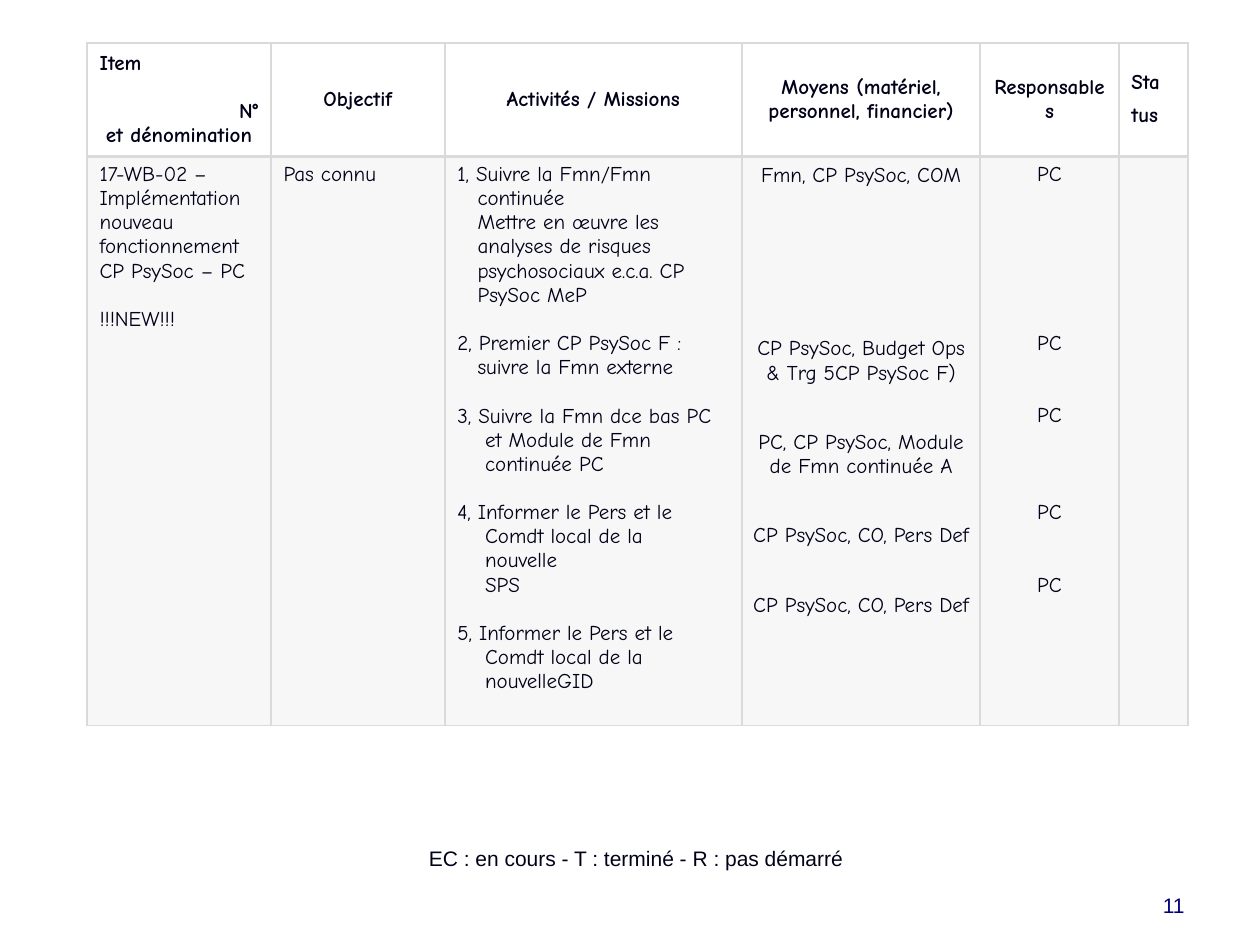
from dataclasses import dataclass

from lxml import etree
from pptx import Presentation
from pptx.dml.color import RGBColor
from pptx.enum.text import MSO_ANCHOR, PP_ALIGN
from pptx.oxml.ns import qn
from pptx.util import Inches, Pt

LEFT, MID, RIGHT = PP_ALIGN.LEFT, PP_ALIGN.CENTER, PP_ALIGN.RIGHT
TOP, CENTER, BOTTOM = MSO_ANCHOR.TOP, MSO_ANCHOR.MIDDLE, MSO_ANCHOR.BOTTOM


@dataclass(frozen=True)
class Theme:
    ink: str = "000018"
    navy: str = "000080"
    grey: str = "DADADA"
    tint: int = 20
    size: float = 12
    line: float = 13.8
    sans: str = "Arial"
    comic: str = "Comic Neue"


THEME = Theme()
COLS = (1.46, 1.38, 2.36, 1.89, 1.1, 0.55)
ROWS = (0.9, 4.52)

HEADS = (
    [("Item", {"align": LEFT}),
     ("N°", {"align": RIGHT, "before": THEME.line}),
     ("et dénomination", {})],
    [("Objectif", {})],
    [("Activités / Missions", {})],
    [("Moyens (matériel, personnel, financier)", {})],
    [("Responsables", {})],
    [("Sta", {"align": LEFT}), ("tus", {"align": LEFT, "before": 5})],
)

TASKS = (
    (0.16, ("1, Suivre la Fmn/Fmn", "continuée", "Mettre en œuvre les",
            "analyses de risques", "psychosociaux e.c.a. CP", "PsySoc MeP")),
    (0.16, ("2, Premier CP PsySoc F :", "suivre la Fmn externe")),
    (0.22, ("3, Suivre la Fmn dce bas PC", "et Module de Fmn",
            "continuée PC")),
    (0.22, ("4, Informer le Pers et le", "Comdt local de la", "nouvelle",
            "SPS")),
    (0.22, ("5, Informer le Pers et le", "Comdt local de la",
            "nouvelleGID")),
)

MEANS = (
    ("Fmn, CP PsySoc, COM", 0),
    ("CP PsySoc, Budget Ops & Trg 5CP PsySoc F)", 4),
    ("PC, CP PsySoc, Module de Fmn continuée A", 1),
    ("CP PsySoc, CO, Pers Def", 1),
    ("CP PsySoc, CO, Pers Def", 1),
)

OWNERS = (("PC", 0), ("PC", 6), ("PC", 2), ("PC", 3), ("PC", 2))


def spread(items, pad=0):
    return [(text, {"before": (skip + 1) * pad + skip * THEME.line if i else 0})
            for i, (text, skip) in enumerate(items)]


def list_tasks():
    lines = []
    for n, (shift, texts) in enumerate(TASKS):
        for i, text in enumerate(texts):
            gap = THEME.line if n and not i else 0
            lines.append((text, {"before": gap, "indent": shift if i else 0}))
    return lines


def write(frame, lines, align=LEFT, bold=False, face=THEME.comic,
          color=THEME.ink):
    for i, (text, form) in enumerate(lines):
        para = frame.add_paragraph() if i else frame.paragraphs[0]
        look = {"alignment": form.get("align", align),
                "space_before": Pt(form.get("before", 0))}
        for name, value in look.items():
            setattr(para, name, value)
        if form.get("indent"):
            para._p.get_or_add_pPr().set("marL", str(Inches(form["indent"])))
        run = para.add_run()
        run.text = text
        font = {"name": face, "size": Pt(THEME.size), "bold": bold}
        for name, value in font.items():
            setattr(run.font, name, value)
        run.font.color.rgb = RGBColor.from_string(color)


def add_text(slide, box, text, align, anchor, color):
    shape = slide.shapes.add_textbox(*map(Inches, box))
    frame = shape.text_frame
    frame.word_wrap = True
    frame.vertical_anchor = anchor
    write(frame, [(text, {})], align, face=THEME.sans, color=color)


def add_edges(cell, base):
    props = cell._tc.get_or_add_tcPr()
    for i, (side, wide) in enumerate(zip("LRTB", (1, 1, 1, base))):
        edge = etree.Element(qn(f"a:ln{side}"), w=str(Pt(wide)))
        fill = etree.SubElement(edge, qn("a:solidFill"))
        etree.SubElement(fill, qn("a:srgbClr"), val=THEME.grey)
        props.insert(i, edge)


def tint(cell):
    cell.fill.solid()
    cell.fill.fore_color.rgb = RGBColor.from_string(THEME.grey)
    color = cell._tc.tcPr.find(f".//{qn('a:srgbClr')}")
    etree.SubElement(color, qn("a:alpha"), val=str(THEME.tint * 1000))


def fill_head(table):
    for col, lines in enumerate(HEADS):
        cell = table.cell(0, col)
        cell.vertical_anchor = CENTER
        cell.fill.background()
        add_edges(cell, 2)
        write(cell.text_frame, lines, MID, bold=True)


def fill_body(table):
    item = "17-WB-02 – Implémentation nouveau fonctionnement CP PsySoc – PC"
    body = (
        (spread([(item, 0), ("!!!NEW!!!", 1)]), LEFT),
        (spread([("Pas connu", 0)]), LEFT),
        (list_tasks(), LEFT),
        (spread(MEANS, 6), MID),
        (spread(OWNERS), MID),
        ([], LEFT),
    )
    for col, (lines, align) in enumerate(body):
        cell = table.cell(1, col)
        cell.vertical_anchor = TOP
        tint(cell)
        add_edges(cell, 1)
        write(cell.text_frame, lines, align)
    means = table.cell(1, 3)
    for name, value in {"margin_left": 0.07, "margin_right": 0.07,
                        "margin_top": 0.06, "margin_bottom": 0}.items():
        setattr(means, name, Inches(value))


def add_plan(slide):
    box = (0.69, 0.34, sum(COLS), sum(ROWS))
    table = slide.shapes.add_table(len(ROWS), len(COLS),
                                   *map(Inches, box)).table
    table.first_row = table.horz_banding = False
    for col, wide in zip(table.columns, COLS):
        col.width = Inches(wide)
    for row, high in zip(table.rows, ROWS):
        row.height = Inches(high)
    fill_head(table)
    fill_body(table)


def main():
    deck = Presentation()
    deck.slide_width, deck.slide_height = Inches(10), Inches(7.5)
    slide = deck.slides.add_slide(deck.slide_layouts[6])
    add_text(slide, (7.17, 6.83, 2.33, 0.5), "11", RIGHT, BOTTOM, THEME.navy)
    add_plan(slide)
    add_text(slide, (2.55, 6.66, 5, 0.3),
             "EC : en cours - T : terminé - R : pas démarré", MID, TOP,
             THEME.ink)
    deck.save("out.pptx")


if __name__ == "__main__":
    main()
